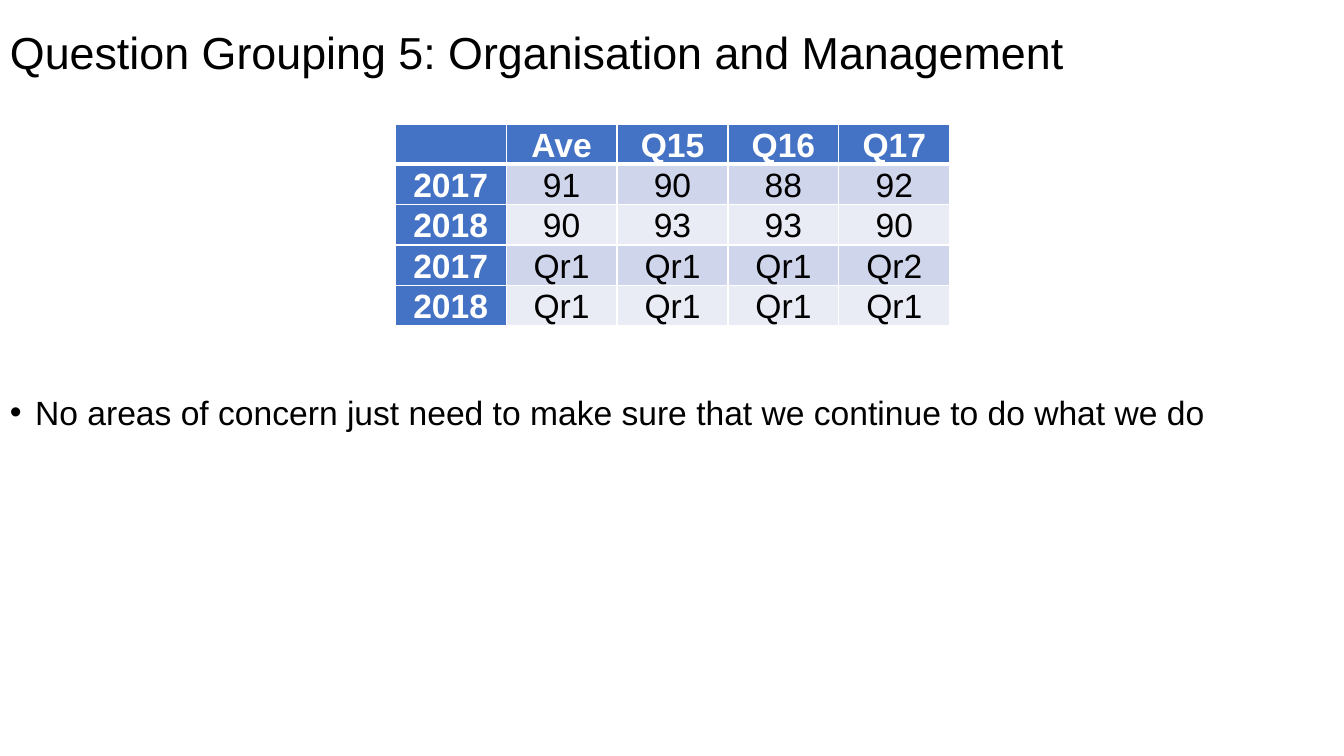
import lxml.etree
import pptx
import pptx.dml.color
import pptx.enum.text
import pptx.oxml
import pptx.oxml.ns
import pptx.util

Inches = pptx.util.Inches
Pt = pptx.util.Pt
BLUE, WHITE, BLACK = "4472C4", "FFFFFF", "000000"
BANDS = ["CFD5EA", "E9EBF5"]


def format_runs(paragraph, size, color, bold=False):
    for run in paragraph.runs:
        run.font.name = "Arial"
        run.font.size = Pt(size)
        run.font.bold = bold
        run.font.color.rgb = pptx.dml.color.RGBColor.from_string(color)


def add_border(cell, side, width):
    properties = cell._tc.get_or_add_tcPr()
    line = lxml.etree.SubElement(properties, pptx.oxml.ns.qn(f"a:ln{side}"), w=str(Pt(width)))
    fill = lxml.etree.SubElement(line, pptx.oxml.ns.qn("a:solidFill"))
    lxml.etree.SubElement(fill, pptx.oxml.ns.qn("a:srgbClr"), val=WHITE)


presentation = pptx.Presentation()
presentation.slide_width = Inches(13.33)
presentation.slide_height = Inches(7.5)
slide = presentation.slides.add_slide(presentation.slide_layouts[6])

title = slide.shapes.add_textbox(0, 0, Inches(13.33), Inches(1.09))
title.text_frame.word_wrap = True
title.text_frame.vertical_anchor = pptx.enum.text.MSO_ANCHOR.MIDDLE
title.text_frame.text = "Question Grouping 5: Organisation and Management"
title_paragraph = title.text_frame.paragraphs[0]
title_paragraph.line_spacing = 0.9
format_runs(title_paragraph, 32, BLACK)

body = slide.shapes.add_textbox(0, Inches(1.22), Inches(13.33), Inches(6.06))
body.text_frame.word_wrap = True
body.text_frame.margin_top = Inches(2.71)
body.text_frame.text = "No areas of concern just need to make sure that we continue to do what we do"
body_paragraph = body.text_frame.paragraphs[0]
body_paragraph.line_spacing = 0.9
format_runs(body_paragraph, 24, BLACK)
bullet_properties = body_paragraph._p.get_or_add_pPr()
bullet_properties.set("marL", str(Inches(0.25)))
bullet_properties.set("indent", str(-Inches(0.25)))
lxml.etree.SubElement(bullet_properties, pptx.oxml.ns.qn("a:buFont"), typeface="Arial")
lxml.etree.SubElement(bullet_properties, pptx.oxml.ns.qn("a:buChar"), char="•")

scores = [
    ["", "Ave", "Q15", "Q16", "Q17"],
    ["2017", "91", "90", "88", "92"],
    ["2018", "90", "93", "93", "90"],
    ["2017", "Qr1", "Qr1", "Qr1", "Qr2"],
    ["2018", "Qr1", "Qr1", "Qr1", "Qr1"],
]
table_frame = slide.shapes.add_table(5, 5, Inches(3.92), Inches(1.23), Inches(5.51), Inches(2))
table = table_frame.table
table.first_col = True
for column in table.columns:
    column.width = Inches(1.1)
for row in table.rows:
    row.height = Inches(0.22)
table_frame.height = Inches(2)

for row_index, values in enumerate(scores):
    for column_index, value in enumerate(values):
        is_header = row_index == 0 or column_index == 0
        cell = table.cell(row_index, column_index)
        cell.margin_left = cell.margin_right = Inches(0.07)
        cell.margin_top = cell.margin_bottom = 0
        cell.vertical_anchor = pptx.enum.text.MSO_ANCHOR.BOTTOM
        for side in "LRTB":
            touches_header_rule = (row_index, side) in [(0, "B"), (1, "T")]
            add_border(cell, side, 3 if touches_header_rule else 1)
        cell.fill.solid()
        fill_color = BLUE if is_header else BANDS[(row_index - 1) % 2]
        cell.fill.fore_color.rgb = pptx.dml.color.RGBColor.from_string(fill_color)
        cell.text_frame.text = value
        paragraph = cell.text_frame.paragraphs[0]
        paragraph.alignment = pptx.enum.text.PP_ALIGN.CENTER
        format_runs(paragraph, 24, WHITE if is_header else BLACK, is_header)

presentation.save("out.pptx")
